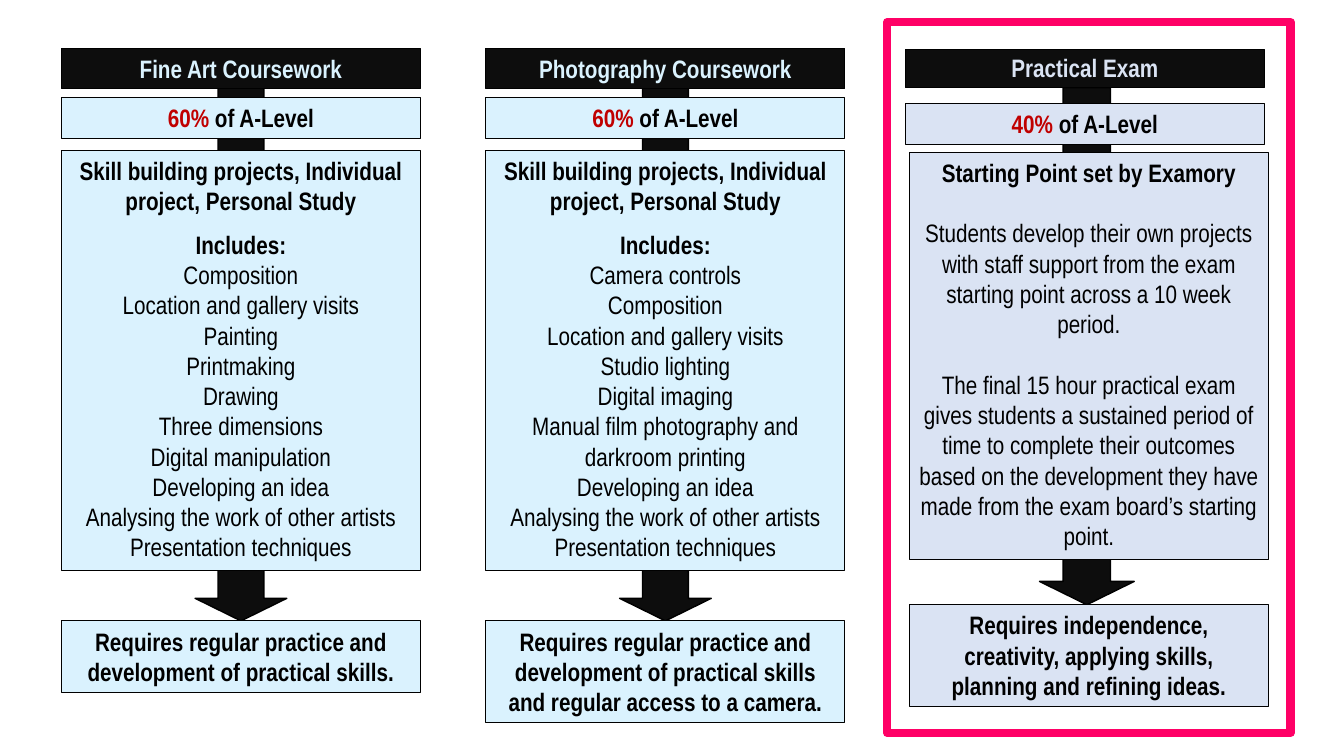
"""Build a slide comparing two coursework routes with the practical exam."""
from dataclasses import dataclass

import pptx
import pptx.dml.color
import pptx.enum.shapes
import pptx.enum.text
import pptx.util

SHAPES = pptx.enum.shapes.MSO_SHAPE
TEXT = pptx.enum.text
INCHES = pptx.util.Inches
POINTS = pptx.util.Pt


@dataclass(frozen=True)
class Theme:
    font: str = "Arial Narrow"
    size: int = 18
    dark: str = "0D0D0D"
    ink: str = "000000"
    share: str = "C00000"
    course: str = "DAF2FE"
    exam: str = "DAE3F3"
    frame: str = "FF0066"
    border: float = 0.75
    arrow_border: float = 1
    frame_border: float = 6


THEME = Theme()
SLIDE_SIZE = (13.33, 7.5)
BOX_WIDTH = 3.56
LINE_HEIGHT = 0.303
PADDING = 0.1
SMALL_GAP, LARGE_GAP = 9.7, 21.7
FRAME = (8.8, 0.22, 4, 7.05)

COURSE_ROWS = {
    "header": (0.48, 0.4), "arrow": 0.81, "share": 0.97,
    "detail": (1.49, 4.17), "outcome": 6.16,
    "arrow_width": 0.91, "indent": 0, "tint": THEME.course,
}
EXAM_ROWS = {
    "header": (0.49, 0.38), "arrow": 0.87, "share": 1.03,
    "detail": (1.51, 4.04), "outcome": 6,
    "arrow_width": 0.94, "indent": 0.04, "tint": THEME.exam,
}

COURSE_INTRO = [
    ("Skill building projects, Individual project, Personal Study", True, 0),
    ("Includes:", True, SMALL_GAP),
]
ART_TOPICS = [
    "Composition", "Location and gallery visits", "Painting", "Printmaking",
    "Drawing", "Three dimensions", "Digital manipulation", "Developing an idea",
    "Analysing the work of other artists", "Presentation techniques",
]
PHOTO_TOPICS = [
    "Camera controls", "Composition", "Location and gallery visits",
    "Studio lighting", "Digital imaging",
    "Manual film photography and darkroom printing", "Developing an idea",
    "Analysing the work of other artists", "Presentation techniques",
]
EXAM_DETAIL = [
    ("Starting Point set by Examory", True, 0),
    ("Students develop their own projects with staff support from the exam "
     "starting point across a 10 week period.", False, LARGE_GAP),
    ("The final 15 hour practical exam gives students a sustained period of time "
     "to complete their outcomes based on the development they have made from "
     "the exam board’s starting point.", False, LARGE_GAP),
]


def with_topics(topics):
    return COURSE_INTRO + [(topic, False, 0) for topic in topics]


COLUMNS = [
    (0.61, COURSE_ROWS, "Fine Art Coursework", "60% ", with_topics(ART_TOPICS),
     "Requires regular practice and development of practical skills.", 2),
    (8.98, EXAM_ROWS, "Practical Exam", "40% ", EXAM_DETAIL,
     "Requires independence, creativity, applying skills, planning and refining ideas.", 3),
    (4.82, COURSE_ROWS, "Photography Coursework", "60% ", with_topics(PHOTO_TOPICS),
     "Requires regular practice and development of practical skills "
     "and regular access to a camera.", 3),
]


def color(value):
    return pptx.dml.color.RGBColor.from_string(value)


def add_shape(page, kind, place, fill, line, weight):
    shape = page.shapes.add_shape(kind, *map(INCHES, place))
    shape.shadow.inherit = False
    if fill:
        shape.fill.solid()
        shape.fill.fore_color.rgb = color(fill)
    else:
        shape.fill.background()
    shape.line.color.rgb = color(line)
    shape.line.width = POINTS(weight)
    return shape


def add_box(page, place, fill, paragraphs):
    box = add_shape(page, SHAPES.RECTANGLE, place, fill, THEME.ink, THEME.border)
    frame = box.text_frame
    frame.word_wrap = True
    frame.vertical_anchor = TEXT.MSO_ANCHOR.TOP
    frame.auto_size = TEXT.MSO_AUTO_SIZE.SHAPE_TO_FIT_TEXT
    for index, (spans, gap) in enumerate(paragraphs):
        para = frame.add_paragraph() if index else frame.paragraphs[0]
        para.alignment = TEXT.PP_ALIGN.CENTER
        para.space_before = POINTS(gap)
        for text, bold, ink in spans:
            span = para.add_run()
            span.text = text
            span.font.name = THEME.font
            span.font.size = POINTS(THEME.size)
            span.font.bold = bold
            span.font.color.rgb = color(ink)
    return box


def height_of(lines):
    return PADDING + lines * LINE_HEIGHT


def add_column(page, left, rows, heading, share, detail, outcome, outcome_lines):
    tint = rows["tint"]
    inner = left + rows["indent"]
    width = rows["arrow_width"]
    center = (left + inner + BOX_WIDTH) / 2
    top = rows["arrow"]
    arrow = add_shape(page, SHAPES.DOWN_ARROW,
                      (center - width / 2, top, width, rows["outcome"] - top),
                      THEME.dark, THEME.ink, THEME.arrow_border)
    arrow.adjustments[0] = 0.5
    arrow.adjustments[1] = 0.246

    top, height = rows["header"]
    header = add_box(page, (left, top, BOX_WIDTH, height), THEME.dark,
                     [([(heading, True, tint)], 0)])
    header.text_frame.auto_size = TEXT.MSO_AUTO_SIZE.NONE
    header.text_frame.vertical_anchor = TEXT.MSO_ANCHOR.BOTTOM
    header.text_frame.paragraphs[0].line_spacing = 0.9

    add_box(page, (left, rows["share"], BOX_WIDTH, height_of(1)), tint,
            [([(share, True, THEME.share), ("of A-Level", True, THEME.ink)], 0)])
    top, height = rows["detail"]
    add_box(page, (inner, top, BOX_WIDTH, height), tint,
            [([(text, bold, THEME.ink)], gap) for text, bold, gap in detail])
    add_box(page, (inner, rows["outcome"], BOX_WIDTH, height_of(outcome_lines)), tint,
            [([(outcome, True, THEME.ink)], 0)])


def main():
    deck = pptx.Presentation()
    deck.slide_width, deck.slide_height = map(INCHES, SLIDE_SIZE)
    page = deck.slides.add_slide(deck.slide_layouts.get_by_name("Blank"))
    for column in COLUMNS:
        add_column(page, *column)
    add_shape(page, SHAPES.RECTANGLE, FRAME, None, THEME.frame, THEME.frame_border)
    deck.save("out.pptx")


if __name__ == "__main__":
    main()
